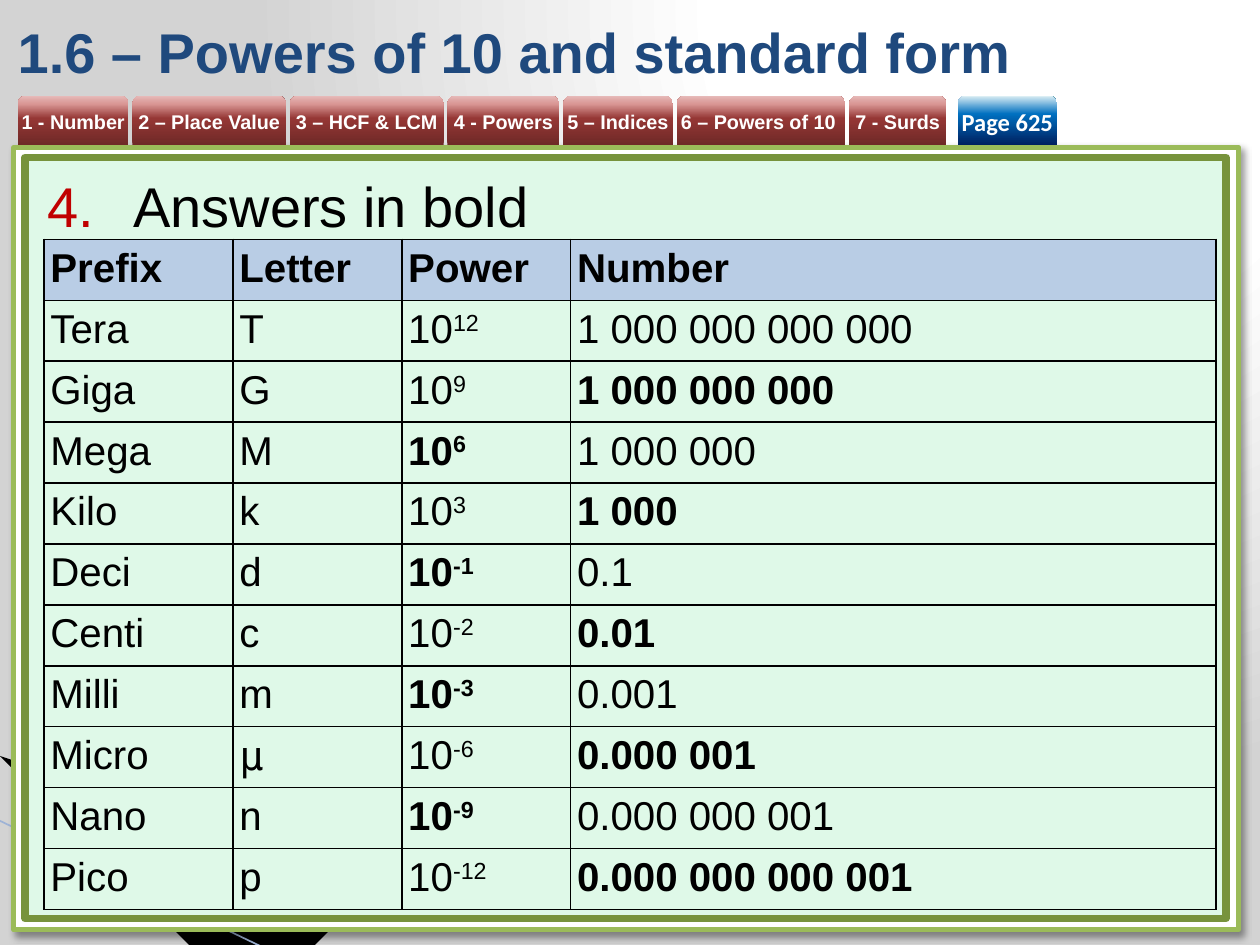
from pptx import Presentation, oxml
from pptx import util as u
from pptx.dml.color import RGBColor
from pptx.enum import shapes, text
from pptx.oxml import ns

TITLE = "1.6 – Powers of 10 and standard form"
QUESTION = "Answers in bold"
TABS = [("1 - Number", 0.88), ("2 – Place Value", 1.22), ("3 – HCF & LCM", 1.22),
        ("4 - Powers", 0.89), ("5 – Indices", 0.87), ("6 – Powers of 10 ", 1.34),
        ("7 - Surds", 0.77)]
HEADINGS = ["Prefix", "Letter", "Power", "Number"]
PREFIXES = [
    ("Tera", "T", "12", "1 000 000 000 000"),
    ("Giga", "G", "9", "1 000 000 000"),
    ("Mega", "M", "6", "1 000 000"),
    ("Kilo", "k", "3", "1 000"),
    ("Deci", "d", "-1", "0.1"),
    ("Centi", "c", "-2", "0.01"),
    ("Milli", "m", "-3", "0.001"),
    ("Micro", "µ", "-6", "0.000 001"),
    ("Nano", "n", "-9", "0.000 000 001"),
    ("Pico", "p", "-12", "0.000 000 000 001"),
]
COLUMNS = [1.5, 1.34, 1.34, 5.12]
COLORS = {"title": "1F497D", "ink": "000000", "paper": "FFFFFF", "mint": "DFF9E8",
          "frame": "9BBB59", "border": "77933C", "header": "B9CDE5", "number": "C00000",
          "wedge": "A7B9DB", "edge": "9EB3D6"}
RED = [(0, "6F2927"), (54, "953735"), (83, "D99694"), (100, "E6B9B8")]
BLUE = [(0, "002060"), (63, "0070C0"), (100, "DBEEF4")]
BACKDROP = [(0, "FFFFFF"), (40, "FFFFFF"), (100, "D3D3D3")]
UPWARD = '<a:lin ang="16200000" scaled="0"/>'
CORNER = '<a:path path="circle"><a:fillToRect l="65000" t="0" r="0" b="98000"/></a:path>'


def color(name):
    return RGBColor.from_string(COLORS[name])


def xml(tag, body="", attributes=""):
    return oxml.parse_xml(f'<{tag} {ns.nsdecls("a", "p")} {attributes}>{body}</{tag}>')


def gradient(stops, direction):
    marks = "".join(f'<a:gs pos="{place * 1000}"><a:srgbClr val="{shade}"/></a:gs>'
                    for place, shade in stops)
    return f'<a:gradFill rotWithShape="1"><a:gsLst>{marks}</a:gsLst>{direction}</a:gradFill>'


def style(span, size, tint, bold=False, font="Arial"):
    span.font.size, span.font.bold, span.font.name = u.Pt(size), bold, font
    span.font.color.rgb = color(tint)


def add_panel(page, left, top, width, height, fill, line, weight):
    panel = page.shapes.add_shape(shapes.MSO_SHAPE.RECTANGLE,
                                  *map(u.Inches, (left, top, width, height)))
    panel.shadow.inherit = False
    panel.fill.solid()
    panel.fill.fore_color.rgb = color(fill)
    panel.line.color.rgb = color(line)
    panel.line.width = u.Pt(weight)
    return panel


def add_wedge(page, points, fill):
    builder = page.shapes.build_freeform(*points[0], scale=u.Inches(1))
    builder.add_line_segments(points[1:], close=True)
    wedge = builder.convert_to_shape()
    wedge.shadow.inherit = False
    wedge.fill.solid()
    wedge.fill.fore_color.rgb = color(fill)
    wedge.line.fill.background()
    return wedge


def add_tab(page, left, width, label, stops, size, font):
    tab = page.shapes.add_shape(shapes.MSO_SHAPE.ROUND_2_SAME_RECTANGLE,
                                *map(u.Inches, (left, 0.76, width, 0.39)))
    tab.shadow.inherit = False
    tab.line.fill.background()
    properties = tab.element.spPr
    properties.insert(2, oxml.parse_xml(gradient(stops, UPWARD).replace(
        "<a:gradFill", f'<a:gradFill {ns.nsdecls("a")}', 1)))
    frame = tab.text_frame
    frame.margin_left = frame.margin_right = frame.margin_top = frame.margin_bottom = 0
    frame.vertical_anchor = text.MSO_ANCHOR.MIDDLE
    frame.word_wrap = False
    frame.text = label
    frame.paragraphs[0].alignment = text.PP_ALIGN.CENTER
    style(frame.paragraphs[0].runs[0], size, "paper", True, font)


def add_decoration(page):
    pale = add_wedge(page, [(-0.01, 6.5), (3.49, 7.5), (2.59, 7.5), (-0.01, 6.49)], "wedge")
    pale.element.spPr.find(".//" + ns.qn("a:srgbClr")).append(xml("a:alpha", "", 'val="40000"'))
    add_wedge(page, [(0, 6.48), (2.56, 7.49), (2.02, 7.5), (0.01, 6.49)], "ink")
    edge = page.shapes.add_connector(shapes.MSO_CONNECTOR.STRAIGHT,
                                     *map(u.Inches, (-0.01, 6.51, 2.09, 7.52)))
    edge.line.color.rgb = color("edge")
    edge.line.width = u.Pt(0.95)
    edge.element.spPr.append(xml("a:effectLst"))
    outer = add_panel(page, 0.11, 1.17, 9.72, 6.21, "paper", "frame", 3)
    outer.element.spPr.find(ns.qn("a:effectLst")).append(xml(
        "a:outerShdw", '<a:srgbClr val="000000"><a:alpha val="40000"/></a:srgbClr>',
        f'blurRad="{u.Pt(4)}" dist="{u.Pt(3)}" dir="2700000" algn="tl" rotWithShape="0"'))
    add_panel(page, 0.2, 1.25, 9.53, 6.04, "mint", "border", 4.33)


def add_question(page):
    box = page.shapes.add_textbox(*map(u.Inches, (0.28, 1.31, 9.37, 0.64)))
    box.text_frame.word_wrap = True
    para = box.text_frame.paragraphs[0]
    para.text = QUESTION
    properties = para._p.get_or_add_pPr()
    indent = u.Inches(0.68)
    properties.set("marL", str(indent))
    properties.set("indent", str(-indent))
    properties.append(xml("a:buClr", f'<a:srgbClr val="{COLORS["number"]}"/>'))
    properties.append(xml("a:buFont", "", 'typeface="+mj-lt"'))
    properties.append(xml("a:buAutoNum", "", 'type="arabicPeriod" startAt="4"'))
    style(para.runs[0], 32, "ink")


def fill_cell(cell, parts, bold, header, font):
    cell.margin_left = cell.margin_right = u.Inches(0.05)
    cell.margin_top = cell.margin_bottom = u.Inches(0.05)
    para = cell.text_frame.paragraphs[0]
    for index, part in enumerate(parts):
        span = para.add_run()
        span.text = part
        style(span, 23, "ink", bold, font)
        if index:
            span.font._element.set("baseline", "30000")
    line = f'<a:solidFill><a:srgbClr val="{COLORS["ink"]}"/></a:solidFill>'
    properties = cell._tc.get_or_add_tcPr()
    for side in ("lnL", "lnR", "lnT", "lnB"):
        properties.append(xml(f"a:{side}", line, f'w="{u.Pt(1)}"'))
    if header:
        cell.fill.solid()
        cell.fill.fore_color.rgb = color("header")
    else:
        cell.fill.background()


def add_prefix_table(page):
    count = len(PREFIXES) + 1
    table = page.shapes.add_table(count, len(COLUMNS),
                                  *map(u.Inches, (0.35, 1.9, sum(COLUMNS), 5.32))).table
    table.first_row = table.horz_banding = False
    for column, width in zip(table.columns, COLUMNS):
        column.width = u.Inches(width)
    for row in table.rows:
        row.height = u.Inches(5.32 / count)
    for col, heading in enumerate(HEADINGS):
        fill_cell(table.cell(0, col), [heading], True, True, "Arial")
    for index, record in enumerate(PREFIXES):
        answer = (3 if index % 2 else 2) if index else None
        for col, value in enumerate(record):
            parts = ["10", value] if col == 2 else [value]
            font = "DejaVu Sans Mono" if value == "µ" else "Arial"
            fill_cell(table.cell(index + 1, col), parts, col == answer, False, font)


def main():
    deck = Presentation()
    deck.slide_width, deck.slide_height = u.Inches(10), u.Inches(7.5)
    page = deck.slides.add_slide(deck.slide_layouts[5])
    page.element.cSld.insert(0, xml(
        "p:bg", f"<p:bgPr>{gradient(BACKDROP, CORNER)}<a:effectLst/></p:bgPr>"))

    title = page.shapes.title
    title.left, title.top, title.width, title.height = map(u.Inches, (0.04, 0.05, 8.43, 0.71))
    title.text_frame.text = TITLE
    title.text_frame.vertical_anchor = text.MSO_ANCHOR.MIDDLE
    title.text_frame.paragraphs[0].alignment = text.PP_ALIGN.LEFT
    style(title.text_frame.paragraphs[0].runs[0], 32, "title", True)

    add_decoration(page)
    left = 0.14
    for label, width in TABS:
        add_tab(page, left, width, label, RED, 11.3, "Arial")
        left += width + 0.03
    add_tab(page, 7.6, 0.79, "Page 625", BLUE, 14, "Calibri")
    add_question(page)
    add_prefix_table(page)
    deck.save("out.pptx")


if __name__ == "__main__":
    main()
